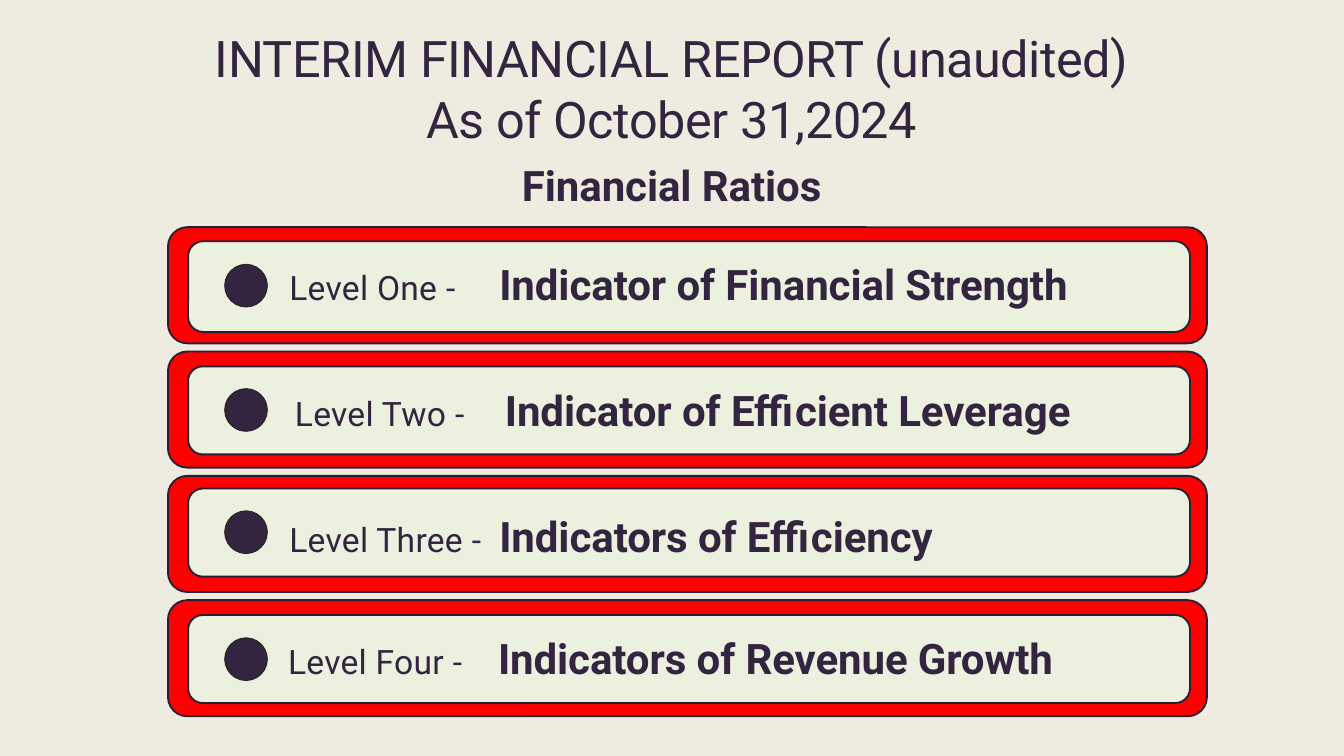
from dataclasses import dataclass

from pptx import Presentation
from pptx.dml.color import RGBColor
from pptx.enum.shapes import MSO_SHAPE as Shape
from pptx.enum.text import MSO_ANCHOR as Anchor, MSO_AUTO_SIZE as AutoSize, PP_ALIGN as Align
from pptx.util import Cm, Pt


@dataclass(frozen=True)
class Theme:
    font: str = "Roboto"
    background: RGBColor = RGBColor(0xEE, 0xEC, 0xE1)
    text: RGBColor = RGBColor(0x33, 0x24, 0x40)
    frame: RGBColor = RGBColor(0xFF, 0x00, 0x00)
    panel: RGBColor = RGBColor(0xEB, 0xF1, 0xDE)
    outline: RGBColor = RGBColor(0x29, 0x1F, 0x35)
    dot_outline: RGBColor = RGBColor(0x1E, 0x1C, 0x11)
    title_size: Pt = Pt(54)
    heading_size: Pt = Pt(45)
    label_size: Pt = Pt(36)


@dataclass(frozen=True)
class Level:
    label: str
    indicator: str
    panel_top: float
    panel_height: float
    dot_top: float
    text_left: float
    text_top: float
    text_width: float


THEME = Theme()
LEVELS = (
    Level("Level One ", "Indicator of Financial Strength", 0.53, 3.43, 1.4, 4.34, 1.04, 33.88),
    Level("Level Two ", "Indicator of Efficient Leverage", 0.56, 3.33, 1.4, 4.55, 1.12, 31.42),
    Level("Level Three ", "Indicators of Efficiency", 0.48, 3.33, 1.32, 4.34, 1.18, 34.29),
    Level("Level Four ", "Indicators of Revenue Growth", 0.56, 3.33, 1.42, 4.29, 1.09, 33.93),
)


def add_run(paragraph, text, size, bold=False, spacing=0):
    run = paragraph.add_run()
    run.text = text
    run.font.size = size
    run.font.bold = bold
    run._r.get_or_add_rPr().set("spc", str(spacing))


def style_paragraph(paragraph, space_before):
    paragraph.font.name = THEME.font
    paragraph.font.color.rgb = THEME.text
    paragraph.space_before = Pt(space_before)


def add_filled(slide, kind, left, top, width, height, fill, line, line_width):
    shape = slide.shapes.add_shape(kind, Cm(left), Cm(top), Cm(width), Cm(height))
    shape.shadow.inherit = False
    shape.fill.solid()
    shape.fill.fore_color.rgb = fill
    shape.line.color.rgb = line
    shape.line.width = Pt(line_width)


def fill_title(slide, left, top, width, height):
    title = slide.shapes.title
    title.left, title.top, title.width, title.height = Cm(left), Cm(top), Cm(width), Cm(height)
    frame = title.text_frame
    frame.auto_size = AutoSize.NONE
    frame.word_wrap = True
    frame.vertical_anchor = Anchor.TOP
    frame.margin_left = frame.margin_top = frame.margin_right = frame.margin_bottom = 0
    lines = (
        ("INTERIM FINANCIAL REPORT (unaudited)", THEME.title_size, False, -50, 1),
        ("As of October 31,2024", THEME.title_size, False, -50, 0),
        ("Financial Ratios", THEME.heading_size, True, -10, 12),
    )
    for index, (text, size, bold, spacing, space_before) in enumerate(lines):
        paragraph = frame.add_paragraph() if index else frame.paragraphs[0]
        paragraph.alignment = Align.CENTER
        style_paragraph(paragraph, space_before)
        add_run(paragraph, text, size, bold, spacing)


def add_level(slide, level, left, top, width, height):
    add_filled(slide, Shape.ROUNDED_RECTANGLE, left, top, width, height,
               THEME.frame, THEME.outline, 2)
    add_filled(slide, Shape.ROUNDED_RECTANGLE, left + 0.76, top + level.panel_top,
               width - 1.4, level.panel_height, THEME.panel, THEME.outline, 2)
    add_filled(slide, Shape.OVAL, left + 2.14, top + level.dot_top, 1.62, 1.62,
               THEME.text, THEME.dot_outline, 0.75)

    box = slide.shapes.add_textbox(Cm(left + level.text_left), Cm(top + level.text_top),
                                   Cm(level.text_width), Cm(2.18))
    box.text_frame.word_wrap = True
    box.text_frame.auto_size = AutoSize.SHAPE_TO_FIT_TEXT
    paragraph = box.text_frame.paragraphs[0]
    style_paragraph(paragraph, 5.8)
    add_run(paragraph, level.label, THEME.label_size, spacing=30)
    add_run(paragraph, "- \t ", THEME.label_size)
    add_run(paragraph, level.indicator, THEME.heading_size, bold=True, spacing=-10)


def main():
    presentation = Presentation()
    presentation.slide_width, presentation.slide_height = Cm(50.8), Cm(28.58)
    slide = presentation.slides.add_slide(presentation.slide_layouts[5])
    slide.background.fill.solid()
    slide.background.fill.fore_color.rgb = THEME.background

    fill_title(slide, 6.35, 1.04, 38.07, 6.96)
    for index, level in enumerate(LEVELS):
        add_level(slide, level, 6.35, 8.59 + 4.7 * index, 39.27, 4.39)
    presentation.save("out.pptx")


if __name__ == "__main__":
    main()
